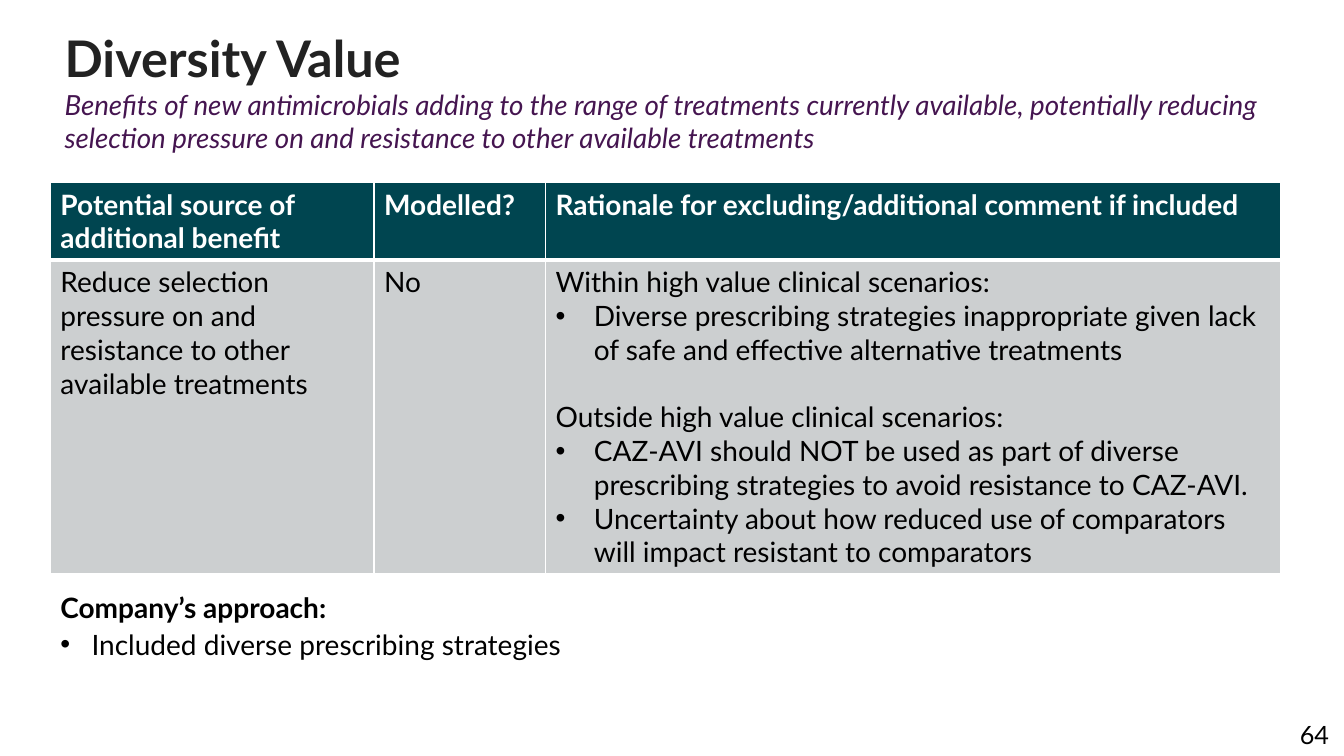
from lxml import etree
from pptx import Presentation
from pptx.dml.color import RGBColor
from pptx.enum import text
from pptx.oxml import ns
from pptx.util import Inches, Pt

BLACK = RGBColor(0x00, 0x00, 0x00)
WHITE = RGBColor(0xFF, 0xFF, 0xFF)
CHARCOAL = RGBColor(0x22, 0x22, 0x22)
PURPLE = RGBColor(0x45, 0x15, 0x50)
TEAL = RGBColor(0x00, 0x45, 0x50)
GREY = RGBColor(0xCC, 0xCF, 0xD0)


def add_run(paragraph, words, color=BLACK, **formats):
    run = paragraph.add_run()
    run.text = words
    run.font.color.rgb = color
    for name, value in ({"name": "Lato", "size": Pt(20), "bold": False} | formats).items():
        setattr(run.font, name, value)


def add_bullet(paragraph, indent):
    properties = paragraph._p.get_or_add_pPr()
    properties.set("marL", str(Inches(indent)))
    properties.set("indent", str(-Inches(indent)))
    etree.SubElement(properties, ns.qn("a:buFont"), typeface="Arial")
    etree.SubElement(properties, ns.qn("a:buChar"), char="•")


presentation = Presentation()
presentation.slide_width, presentation.slide_height = Inches(13.33), Inches(7.5)
slide = presentation.slides.add_slide(presentation.slide_layouts[5])

# Title and subtitle
title = slide.shapes.title
title.left, title.top = Inches(0.54), Inches(0.22)
title.width, title.height = Inches(12.12), Inches(1.4)
frame = title.text_frame
frame.word_wrap = True
frame.auto_size = text.MSO_AUTO_SIZE.NONE
frame.vertical_anchor = text.MSO_ANCHOR.TOP
paragraph = frame.paragraphs[0]
paragraph.alignment = text.PP_ALIGN.LEFT
add_run(paragraph, "Diversity Value", CHARCOAL, size=Pt(36), bold=True)
paragraph.add_line_break()
add_run(
    paragraph,
    "Benefits of new antimicrobials adding to the range of treatments currently available, "
    "potentially reducing selection pressure on and resistance to other available treatments",
    PURPLE, size=Pt(19.8), italic=True,
)

# Benefit table: each cell is a list of (text, is bullet, space before in points)
rows = [
    [
        [("Potential source of additional benefit", False, 0)],
        [("Modelled?", False, 0)],
        [("Rationale for excluding/additional comment if included", False, 0)],
    ],
    [
        [("Reduce selection pressure on and resistance to other available treatments", False, 0)],
        [("No", False, 0)],
        [
            ("Within high value clinical scenarios:", False, 0),
            ("Diverse prescribing strategies inappropriate given lack of safe and "
             "effective alternative treatments", True, 0),
            ("Outside high value clinical scenarios:", False, 24),
            ("CAZ-AVI should NOT be used as part of diverse prescribing strategies "
             "to avoid resistance to CAZ-AVI.", True, 0),
            ("Uncertainty about how reduced use of comparators will impact resistant "
             "to comparators", True, 0),
        ],
    ],
]
row_styles = [
    {"fill": TEAL, "color": WHITE, "bold": True, "borders": {"L": 1, "R": 1, "T": 1, "B": 3}},
    {"fill": GREY, "color": BLACK, "bold": False, "borders": {"L": 1, "R": 1, "T": 3, "B": 1}},
]
table = slide.shapes.add_table(
    2, 3, Inches(0.5), Inches(1.81), Inches(12.2), Inches(3.87)
).table
for column, width in zip(table.columns, (3.21, 1.7, 7.29)):
    column.width = Inches(width)
for row, height in zip(table.rows, (0.77, 3.1)):
    row.height = Inches(height)

for row, contents, style in zip(table.rows, rows, row_styles):
    for cell, entries in zip(row.cells, contents):
        for side, weight in style["borders"].items():
            line = etree.SubElement(
                cell._tc.get_or_add_tcPr(), ns.qn(f"a:ln{side}"), w=str(Pt(weight))
            )
            line_fill = etree.SubElement(line, ns.qn("a:solidFill"))
            etree.SubElement(line_fill, ns.qn("a:srgbClr"), val=str(WHITE))
        cell.fill.solid()
        cell.fill.fore_color.rgb = style["fill"]
        for number, (words, is_bullet, space) in enumerate(entries):
            frame = cell.text_frame
            paragraph = frame.add_paragraph() if number else frame.paragraphs[0]
            paragraph.space_before = Pt(space)
            add_run(paragraph, words, style["color"], bold=style["bold"])
            if is_bullet:
                add_bullet(paragraph, 0.38)

# Company's approach
approach = slide.shapes.add_textbox(Inches(0.5), Inches(5.81), Inches(12.12), Inches(0.99))
frame = approach.text_frame
frame.word_wrap = True
heading, strategy = frame.paragraphs[0], frame.add_paragraph()
heading.space_before = strategy.space_before = Pt(2)
add_run(heading, "Company’s approach:", bold=True)
add_run(strategy, "Included diverse prescribing strategies")
add_bullet(strategy, 0.31)

# Slide number
slide_number = slide.shapes.add_textbox(Inches(11.44), Inches(7.09), Inches(1.84), Inches(0.4))
frame = slide_number.text_frame
frame.word_wrap = True
frame.paragraphs[0].alignment = text.PP_ALIGN.RIGHT
add_run(frame.paragraphs[0], "64", size=Pt(18))

presentation.save("out.pptx")
